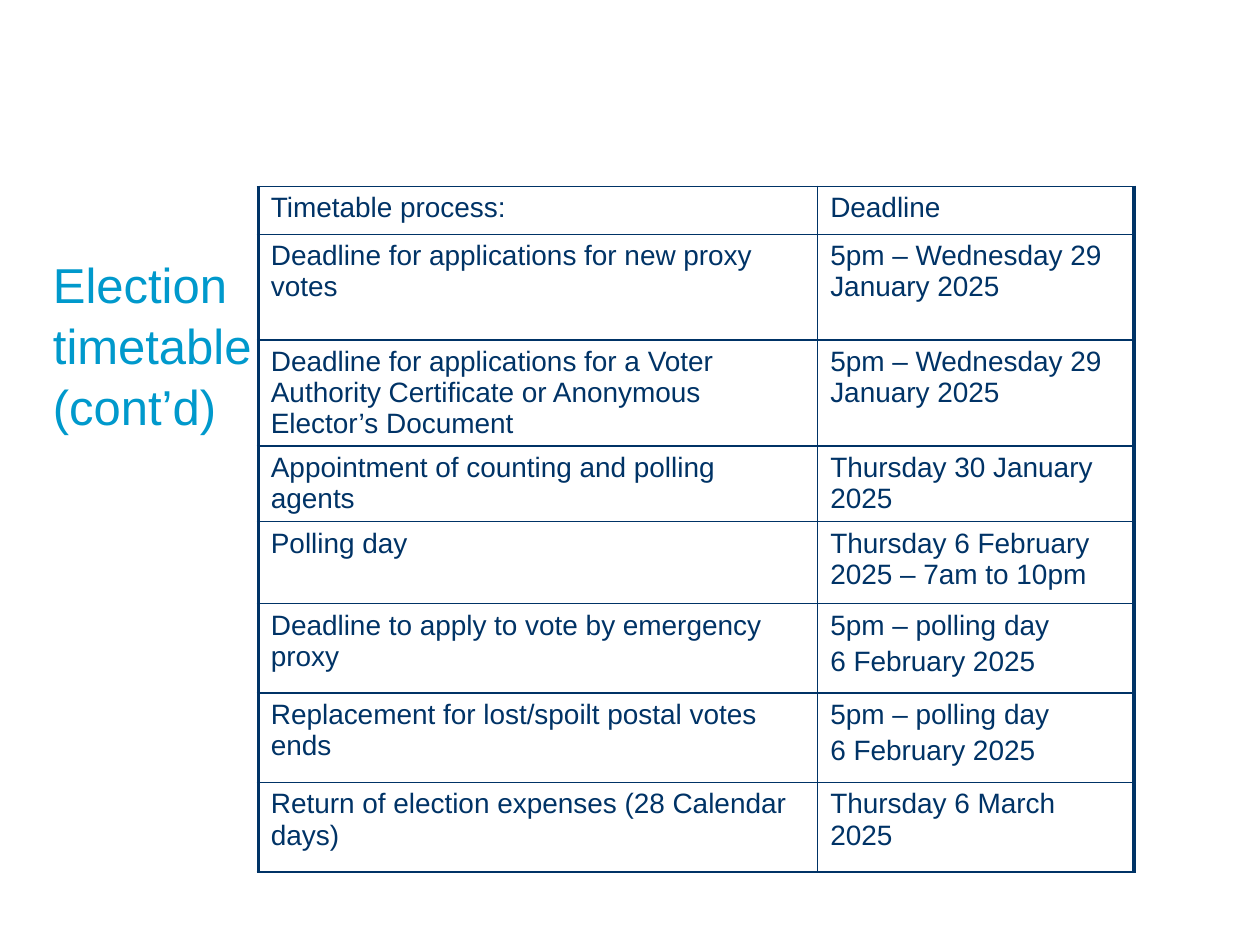
from lxml.etree import SubElement
from pptx import Presentation
from pptx.dml.color import RGBColor
from pptx.enum.text import MSO_ANCHOR, MSO_AUTO_SIZE, PP_ALIGN
from pptx.oxml.ns import qn
from pptx.util import Inches, Pt

NAVY, BLUE = "003366", "0099CC"
THIN, THICK = 1, 2.25
COL_WIDTHS = [4.44, 2.51]
ROW_HEIGHTS = [0.38, 0.84, 0.84, 0.6, 0.65, 0.71, 0.71, 0.71]
TIMETABLE = [
    ("Timetable process:", "Deadline"),
    ("Deadline for applications for new proxy votes",
     "5pm – Wednesday 29 January 2025"),
    ("Deadline for applications for a Voter Authority Certificate "
     "or Anonymous Elector’s Document",
     "5pm – Wednesday 29 January 2025"),
    ("Appointment of counting and polling agents", "Thursday 30 January 2025"),
    ("Polling day", "Thursday 6 February 2025 – 7am to 10pm"),
    ("Deadline to apply to vote by emergency proxy",
     "5pm – polling day\n6 February 2025"),
    ("Replacement for lost/spoilt postal votes ends",
     "5pm – polling day\n6 February 2025"),
    ("Return of election expenses (28 Calendar days)",
     "Thursday 6 March 2025"),
]


def color(value):
    return RGBColor.from_string(value)


def set_attrs(obj, values):
    for name, value in values.items():
        setattr(obj, name, value)


def format_font(font, size, value):
    set_attrs(font, {"name": "Arial", "size": Pt(size)})
    font.color.rgb = color(value)


def add_title(s, text):
    sp = s.shapes.title
    set_attrs(sp, {"left": Inches(0.42), "top": Inches(2),
                   "width": Inches(2.75), "height": Inches(4.67)})
    tf = sp.text_frame
    tf.text = text
    set_attrs(tf, {"margin_left": 0, "margin_top": 0, "margin_right": 0,
                   "margin_bottom": 0, "word_wrap": True,
                   "auto_size": MSO_AUTO_SIZE.NONE,
                   "vertical_anchor": MSO_ANCHOR.TOP})
    p = tf.paragraphs[0]
    set_attrs(p, {"alignment": PP_ALIGN.LEFT, "line_spacing": 1.04})
    format_font(p.runs[0].font, 28, BLUE)


def set_borders(cell, widths):
    """Draw the cell's sides; must run before the cell's fill is set."""
    tc_pr = cell._tc.get_or_add_tcPr()
    for side, width in widths.items():
        ln = SubElement(tc_pr, qn(f"a:ln{side}"), w=str(Pt(width)))
        fill = SubElement(ln, qn("a:solidFill"))
        SubElement(fill, qn("a:srgbClr"), val=NAVY)


def fill_cell(cell, text, widths):
    set_borders(cell, widths)
    cell.fill.background()
    tf = cell.text_frame
    tf.text = text
    for i, p in enumerate(tf.paragraphs):
        if i:
            p.space_before = Pt(3)
        format_font(p.runs[0].font, 16, NAVY)


def add_timetable(s, rows):
    frame = s.shapes.add_table(
        len(rows), len(COL_WIDTHS), Inches(2.05), Inches(1.48),
        Inches(sum(COL_WIDTHS)), Inches(sum(ROW_HEIGHTS)))
    table = frame.table
    set_attrs(table, {"first_row": False, "horz_banding": False})
    for column, width in zip(table.columns, COL_WIDTHS):
        column.width = Inches(width)
    for row, height, texts in zip(table.rows, ROW_HEIGHTS, rows):
        row.height = Inches(height)
        for col, (cell, text) in enumerate(zip(row.cells, texts)):
            last = col == len(COL_WIDTHS) - 1
            fill_cell(cell, text, {"L": THIN if col else THICK,
                                   "R": THICK if last else THIN,
                                   "T": THIN, "B": THIN})


def main():
    prs = Presentation()
    set_attrs(prs, {"slide_width": Inches(10), "slide_height": Inches(7.5)})
    s = prs.slides.add_slide(prs.slide_layouts[5])
    add_title(s, "Election timetable (cont’d)")
    add_timetable(s, TIMETABLE)
    prs.save("out.pptx")


if __name__ == "__main__":
    main()
